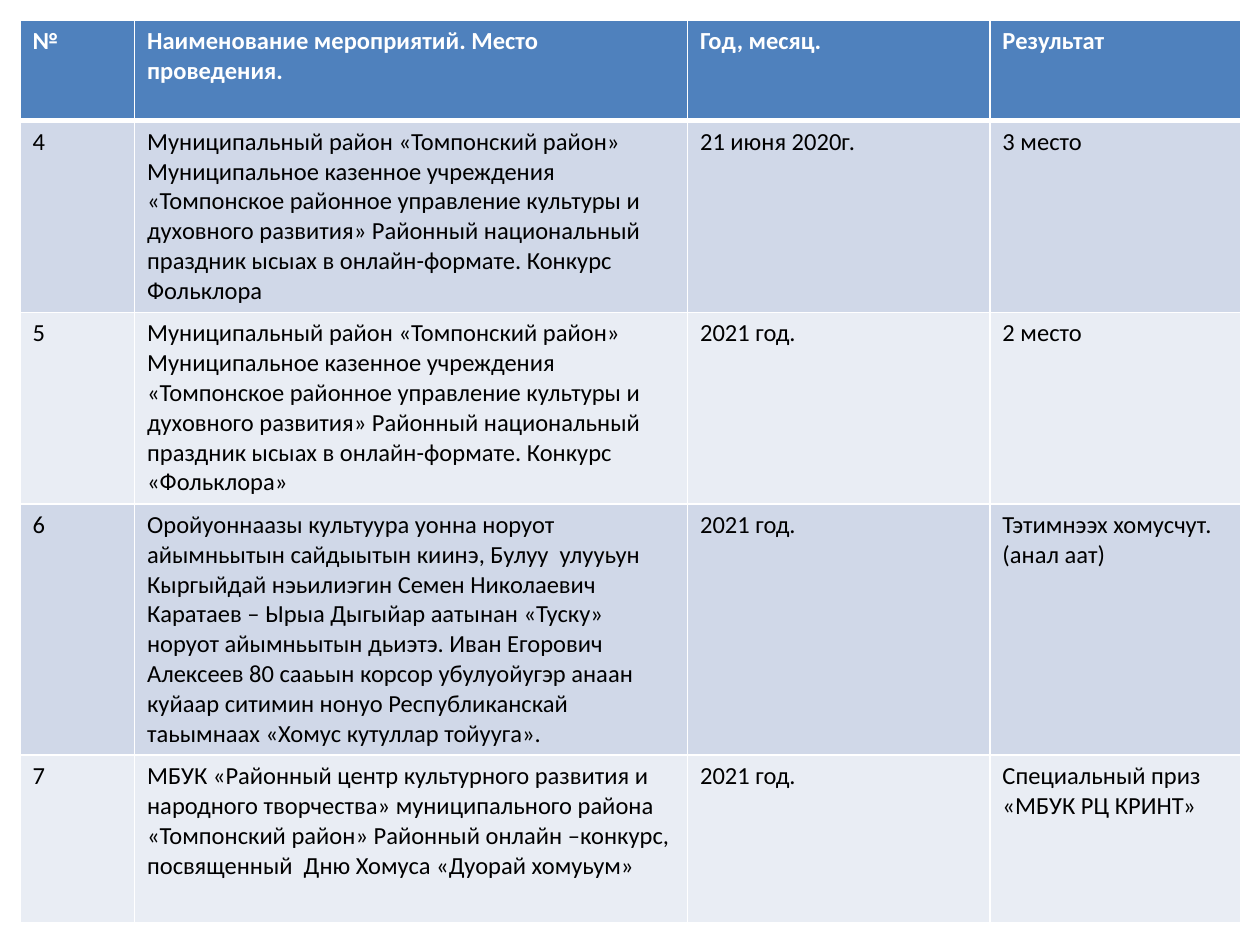
from lxml.etree import SubElement
from pptx import Presentation
from pptx.dml.color import RGBColor
from pptx.oxml.ns import qn
from pptx.util import Pt

COLORS = {"head": "4F81BD", "odd": "D0D8E8", "even": "E9EDF4",
          "white": "FFFFFF", "text": "000000"}
FESTIVAL = ("Муниципальный район «Томпонский район» Муниципальное казенное учреждения "
            "«Томпонское районное управление культуры и духовного развития» Районный "
            "национальный праздник ысыах в онлайн-формате. Конкурс ")
ROWS = [
    ("№", "Наименование мероприятий. Место проведения.", "Год, месяц.", "Результат"),
    ("4", FESTIVAL + "Фольклора", "21 июня 2020г.", "3 место"),
    ("5", FESTIVAL + "«Фольклора»", "2021 год.", "2 место"),
    ("6", "Оройуоннаазы культуура уонна норуот айымньытын сайдыытын киинэ, Булуу  улууьун\n"
          "Кыргыйдай нэьилиэгин Семен Николаевич Каратаев – Ырыа Дыгыйар аатынан «Туску» "
          "норуот айымньытын дьиэтэ. Иван Егорович Алексеев 80 сааьын корсор убулуойугэр "
          "анаан куйаар ситимин нонуо Республиканскай таьымнаах «Хомус кутуллар тойууга».",
     "2021 год.", "Тэтимнээх хомусчут.\n(анал аат)"),
    ("7", "МБУК «Районный центр культурного развития и народного творчества» муниципального "
          "района  «Томпонский район» Районный онлайн –конкурс, посвященный  Дню Хомуса "
          "«Дуорай хомуьум»", "2021 год.", "Специальный приз «МБУК РЦ КРИНТ»"),
]
COL_WIDTHS = [65.5, 316, 172.8, 143.3]
ROW_HEIGHTS = [57.6, 109, 109, 143, 96]
LEFT = TOP = 11.4


def add_borders(cell, widths):
    tc_pr = cell._tc.get_or_add_tcPr()
    for side, width in widths.items():
        ln = SubElement(tc_pr, qn("a:ln" + side), w=str(Pt(width)))
        fill = SubElement(ln, qn("a:solidFill"))
        SubElement(fill, qn("a:srgbClr"), val=COLORS["white"])


def format_cell(cell, text, row):
    add_borders(cell, {"L": 1, "R": 1, "T": 3 if row == 1 else 1, "B": 3 if row == 0 else 1})
    band = "head" if row == 0 else "odd" if row % 2 else "even"
    cell.fill.solid()
    cell.fill.fore_color.rgb = RGBColor.from_string(COLORS[band])
    cell.text = text
    font_format = {"name": "Calibri", "size": Pt(14), "bold": row == 0}
    for p in cell.text_frame.paragraphs:
        for r in p.runs:
            for name, value in font_format.items():
                setattr(r.font, name, value)
            r.font.color.rgb = RGBColor.from_string(COLORS["text" if row else "white"])


def main():
    prs = Presentation()
    prs.slide_width, prs.slide_height = Pt(720), Pt(540)
    s = prs.slides.add_slide(prs.slide_layouts[6])
    table = s.shapes.add_table(len(ROWS), len(COL_WIDTHS), Pt(LEFT), Pt(TOP),
                               Pt(sum(COL_WIDTHS)), Pt(sum(ROW_HEIGHTS))).table
    for column, width in zip(table.columns, COL_WIDTHS):
        column.width = Pt(width)
    for i, (row, height, texts) in enumerate(zip(table.rows, ROW_HEIGHTS, ROWS)):
        row.height = Pt(height)
        for cell, text in zip(row.cells, texts):
            format_cell(cell, text, i)
    prs.save("out.pptx")


if __name__ == "__main__":
    main()
